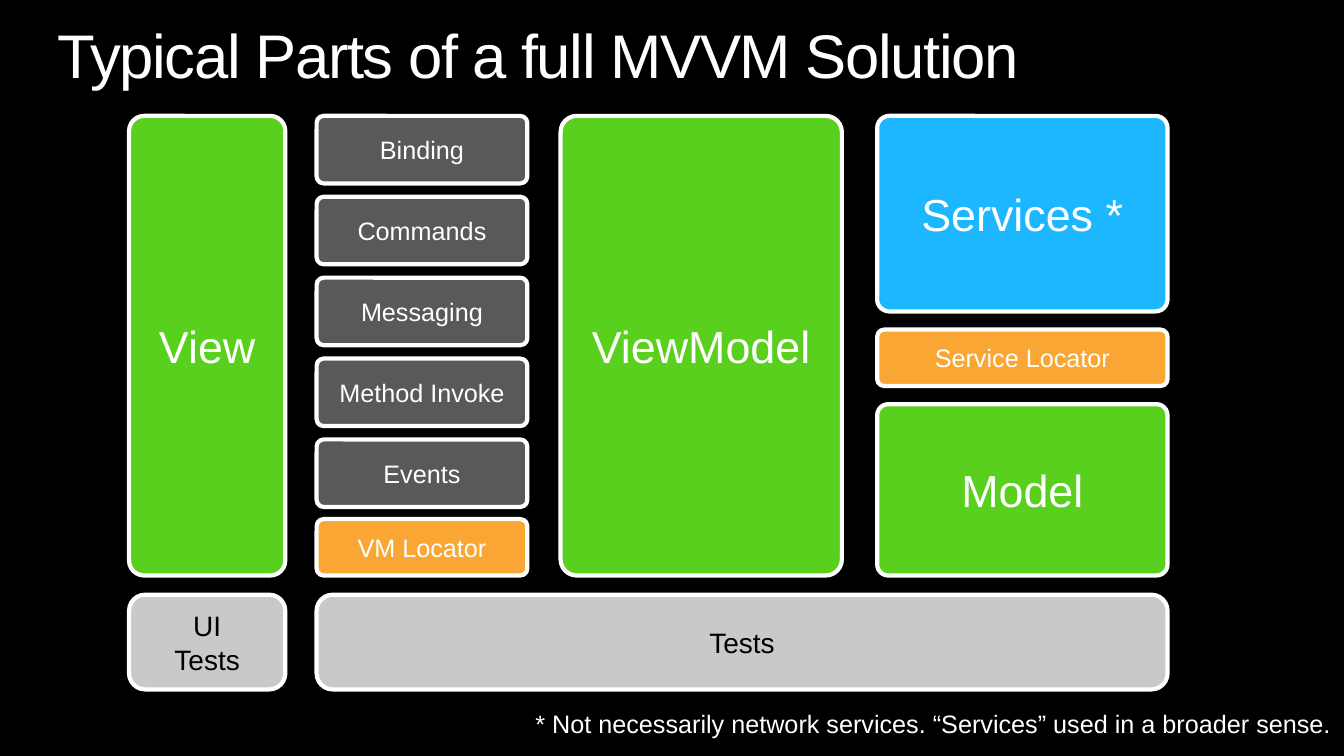
import pptx
import pptx.util
import pptx.dml.color
import pptx.enum.shapes
import pptx.enum.text

Inches = pptx.util.Inches
Pt = pptx.util.Pt

COLORS = {
    "black": "000000",
    "white": "FFFFFF",
    "green": "59D01E",
    "blue": "1CB7FF",
    "orange": "FAA634",
    "dark": "59585A",
    "light": "C9C9C9",
}

# Shared rows and columns: position, extent
TOP = 1.15
VIEW_COL = (1.28, 1.55)
GLUE_COL = (3.14, 2.09)
VIEWMODEL_COL = (5.56, 2.79)
SERVICE_COL = (8.7, 2.88)
FULL_ROW = (TOP, 4.56)
TEST_ROW = (5.9, 0.94)
GLUE_STEP = 0.8025


def rgb(name):
    return pptx.dml.color.RGBColor.from_string(COLORS[name])


def write(frame, text, size, color, align):
    """Fill a text frame, one paragraph for each line of text."""
    frame.text = text
    frame.word_wrap = True
    for paragraph in frame.paragraphs:
        paragraph.alignment = align
        for run in paragraph.runs:
            for key, value in {"name": "Arial", "size": Pt(size)}.items():
                setattr(run.font, key, value)
            run.font.color.rgb = rgb(color)


def add_part(slide, text, column, row, fill, size, corner, color="white"):
    """Add a rounded box for one part of the solution."""
    (left, width), (top, height) = column, row
    part = slide.shapes.add_shape(
        pptx.enum.shapes.MSO_SHAPE.ROUNDED_RECTANGLE,
        Inches(left), Inches(top), Inches(width), Inches(height))
    part.adjustments[0] = corner / min(width, height)
    part.shadow.inherit = False
    part.fill.solid()
    part.fill.fore_color.rgb = rgb(fill)
    part.line.color.rgb = rgb("white")
    part.line.width = Pt(3)
    part.text_frame.vertical_anchor = pptx.enum.text.MSO_ANCHOR.MIDDLE
    write(part.text_frame, text, size, color, pptx.enum.text.PP_ALIGN.CENTER)


def add_label(slide, text, left, top, width, height, size):
    """Add a plain text box without margins."""
    label = slide.shapes.add_textbox(
        Inches(left), Inches(top), Inches(width), Inches(height))
    frame = label.text_frame
    for side in ("left", "top", "right", "bottom"):
        setattr(frame, f"margin_{side}", 0)
    write(frame, text, size, "white", pptx.enum.text.PP_ALIGN.LEFT)
    return frame.paragraphs[0]


def main():
    deck = pptx.Presentation()
    deck.slide_width = Inches(13.33)
    deck.slide_height = Inches(7.5)
    slide = deck.slides.add_slide(deck.slide_layouts[6])
    slide.background.fill.solid()
    slide.background.fill.fore_color.rgb = rgb("black")

    # Title, with slightly tightened letters
    title = add_label(slide, "Typical Parts of a full MVVM Solution",
                      0.57, 0.25, 12.19, 0.67, 44)
    title.line_spacing = 0.9
    title.runs[0].font._element.set("spc", "-100")

    # Main parts
    for name, column, row, fill, corner in (
            ("View", VIEW_COL, FULL_ROW, "green", 0.15),
            ("ViewModel", VIEWMODEL_COL, FULL_ROW, "green", 0.16),
            ("Model", SERVICE_COL, (4.01, 1.7), "green", 0.11),
            ("Services *", SERVICE_COL, (TOP, 1.94), "blue", 0.12)):
        add_part(slide, name, column, row, fill, 32, corner)

    # Glue between View and ViewModel
    glue = ("Binding", "Commands", "Messaging", "Method Invoke", "Events")
    for index, name in enumerate(glue):
        row = (TOP + index * GLUE_STEP, 0.67)
        add_part(slide, name, GLUE_COL, row, "dark", 18, 0.07)

    # Locators
    add_part(slide, "VM Locator", GLUE_COL, (5.15, 0.56), "orange", 18, 0.07)
    add_part(slide, "Service Locator", SERVICE_COL, (3.27, 0.56),
             "orange", 18, 0.07)

    # Tests
    tests_width = sum(SERVICE_COL) - GLUE_COL[0]
    for name, column in (("UI\nTests", VIEW_COL),
                         ("Tests", (GLUE_COL[0], tests_width))):
        add_part(slide, name, column, TEST_ROW, "light", 20, 0.16, "black")

    # Footnote
    add_label(slide, "* Not necessarily network services. "
              "“Services” used in a broader sense.",
              5.31, 7.03, 7.9, 0.31, 18)

    deck.save("out.pptx")


if __name__ == "__main__":
    main()
